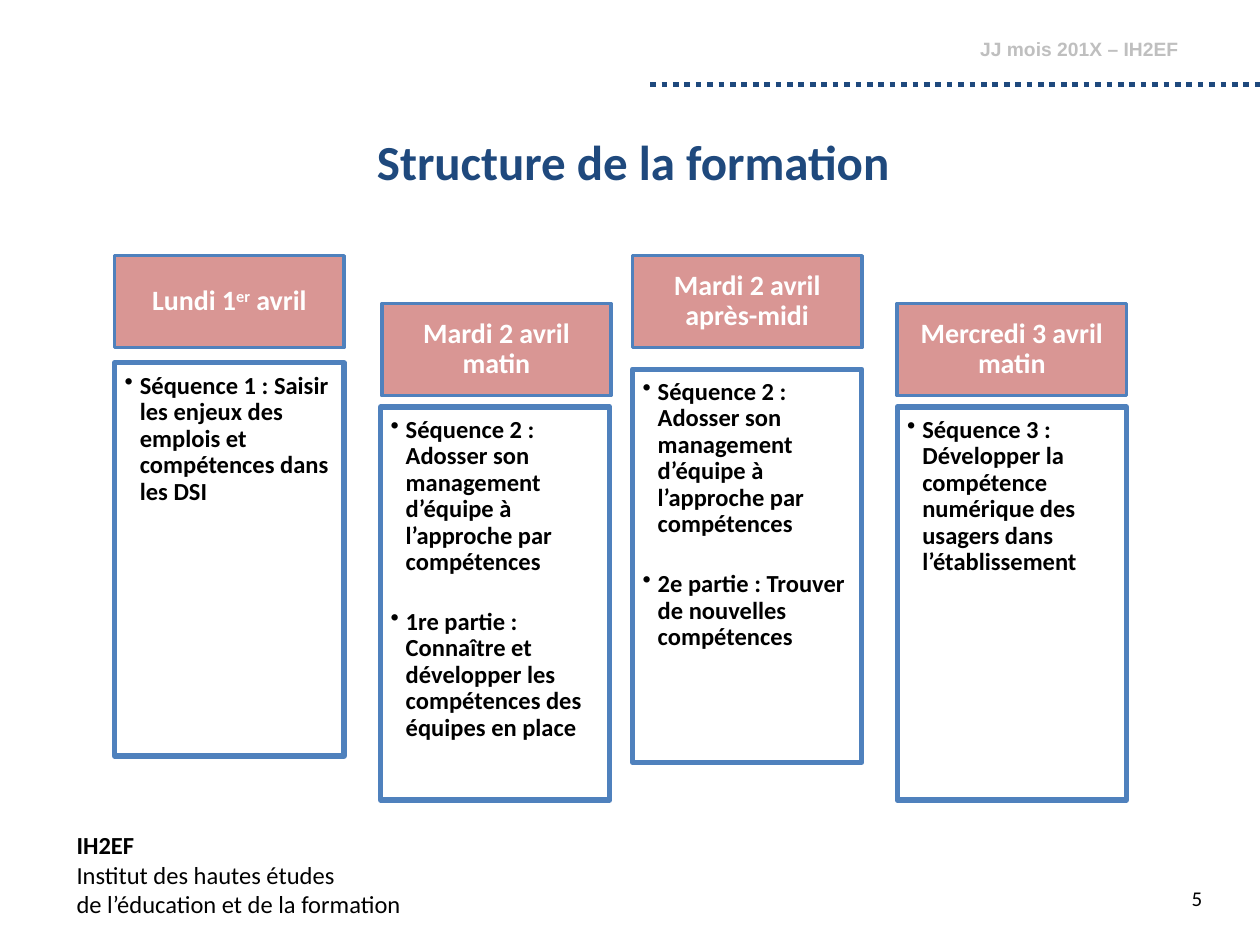
from dataclasses import dataclass

from lxml.etree import SubElement
from pptx import Presentation
from pptx.dml.color import RGBColor
from pptx.enum.dml import MSO_LINE
from pptx.enum.shapes import MSO_CONNECTOR, MSO_SHAPE
from pptx.enum.text import MSO_ANCHOR as Anchor, PP_ALIGN as Align
from pptx.oxml.ns import qn
from pptx.util import Inches, Pt

TITLE_ONLY = 5


@dataclass(frozen=True)
class Theme:
    navy: str = "1F497D"
    blue: str = "4F81BD"
    rose: str = "D99694"
    grey: str = "BFBFBF"
    white: str = "FFFFFF"
    black: str = "000000"
    body_font: str = "Calibri"
    header_font: str = "Arial"
    title_size: int = 28
    heading_size: int = 16
    text_size: int = 14
    number_size: int = 12
    header_size: int = 11


class SlideBuilder:
    CARD_WIDTH = 1.82
    HEADING_HEIGHT = 0.73
    LIST_HEIGHT = 3.12

    def __init__(self, slide, theme):
        self.slide = slide
        self.theme = theme

    def format(self, para, size, color, bold=False, font=None, align=Align.LEFT):
        para.alignment = align
        para.font.name = font or self.theme.body_font
        para.font.size = Pt(size)
        para.font.bold = bold
        para.font.color.rgb = RGBColor.from_string(color)

    def title(self, text, left, top, width, height):
        title = self.slide.shapes.title
        title.left, title.top = Inches(left), Inches(top)
        title.width, title.height = Inches(width), Inches(height)
        title.text_frame.text = text
        title.text_frame.vertical_anchor = Anchor.TOP
        self.format(title.text_frame.paragraphs[0], self.theme.title_size,
                    self.theme.navy, bold=True, align=Align.CENTER)

    def text(self, lines, left, top, width, height, anchor=Anchor.TOP):
        """Add a text box and return its paragraphs, ready to be formatted."""
        box = self.slide.shapes.add_textbox(
            Inches(left), Inches(top), Inches(width), Inches(height))
        frame = box.text_frame
        frame.word_wrap = True
        frame.vertical_anchor = anchor
        frame.text = "\n".join(lines)
        return frame.paragraphs

    def dotted_rule(self, left, right, y):
        rule = self.slide.shapes.add_connector(
            MSO_CONNECTOR.STRAIGHT, Inches(left), Inches(y), Inches(right), Inches(y))
        rule.line.color.rgb = RGBColor.from_string(self.theme.navy)
        rule.line.width = Pt(3.25)
        rule.line.dash_style = MSO_LINE.ROUND_DOT
        SubElement(rule._element.spPr, qn("a:effectLst"))

    def rectangle(self, left, top, height, fill, line_width, margins, anchor):
        box = self.slide.shapes.add_shape(
            MSO_SHAPE.RECTANGLE, Inches(left), Inches(top),
            Inches(self.CARD_WIDTH), Inches(height))
        box.shadow.inherit = False
        box.fill.solid()
        box.fill.fore_color.rgb = RGBColor.from_string(fill)
        box.line.color.rgb = RGBColor.from_string(self.theme.blue)
        box.line.width = Pt(line_width)
        frame = box.text_frame
        frame.word_wrap = True
        frame.vertical_anchor = anchor
        (frame.margin_left, frame.margin_top,
         frame.margin_right, frame.margin_bottom) = map(Inches, margins)
        return box

    def heading(self, parts, left, top):
        """Add a day heading; every second part is set as superscript."""
        box = self.rectangle(left, top, self.HEADING_HEIGHT, self.theme.rose, 2,
                             (0.12, 0.07, 0.12, 0.07), Anchor.MIDDLE)
        para = box.text_frame.paragraphs[0]
        self.format(para, self.theme.heading_size, self.theme.white,
                    bold=True, align=Align.CENTER)
        para.line_spacing = 0.9
        for index, part in enumerate(parts):
            span = para.add_run()
            span.text = part
            if index % 2:
                span._r.get_or_add_rPr().set("baseline", "30000")

    def bullet_list(self, items, left, top):
        box = self.rectangle(left, top, self.LIST_HEIGHT, self.theme.white, 3,
                             (0.08, 0.08, 0.11, 0.12), Anchor.TOP)
        fill_color = box._element.spPr.find(qn("a:solidFill"))[0]
        SubElement(fill_color, qn("a:alpha"), val="90000")
        box.text_frame.text = "\n".join(items)
        paras = box.text_frame.paragraphs
        for para in paras:
            self.format(para, self.theme.text_size, self.theme.black, bold=True)
            para.line_spacing = 0.9
            para.space_after = Pt(19 if para is not paras[-1] else 0)
            properties = para._p.get_or_add_pPr()
            properties.set("marL", str(Inches(0.12)))
            properties.set("indent", str(-Inches(0.12)))
            bullet = properties.makeelement(qn("a:buChar"), {"char": "•"})
            properties.insert_element_before(
                bullet, "a:tabLst", "a:defRPr", "a:extLst")


def main():
    theme = Theme()
    deck = Presentation()
    deck.slide_width, deck.slide_height = Inches(10), Inches(7.5)
    page = SlideBuilder(deck.slides.add_slide(deck.slide_layouts[TITLE_ONLY]), theme)

    institute = page.text(
        ["IH2EF", "Institut des hautes études", "de l’éducation et de la formation"],
        0.51, 6.54, 3.04, 0.81)
    for index, para in enumerate(institute):
        page.format(para, theme.text_size, theme.black, bold=index == 0)
    number = page.text(["5"], 6.81, 6.98, 2.83, 0.3)[0]
    page.format(number, theme.number_size, theme.black, align=Align.RIGHT)

    page.dotted_rule(5.16, 10.12, 0.67)
    header = page.text(["JJ mois 201X – IH2EF"], 7.68, 0.13, 2.99, 0.51, Anchor.MIDDLE)[0]
    page.format(header, theme.header_size, theme.grey, bold=True, font=theme.header_font)
    page.title("Structure de la formation", 0.91, 0.99, 8.23, 1.04)

    high, low = 2.03, 2.41
    sequence_2 = "Séquence 2 : Adosser son management d’équipe à l’approche par compétences"
    # heading parts, heading left, heading top, list left, list top, list items
    sessions = [
        (["Lundi 1", "er", " avril"], 0.91, high, 0.91, 2.88,
         ["Séquence 1 : Saisir les enjeux des emplois et compétences dans les DSI"]),
        (["Mardi 2 avril matin"], 3.03, low, 3.02, 3.23,
         [sequence_2,
          "1re partie : Connaître et développer les compétences des équipes en place"]),
        (["Mardi 2 avril après-midi"], 5.02, high, 5.02, 2.93,
         [sequence_2, "2e partie : Trouver de nouvelles compétences"]),
        (["Mercredi 3 avril matin"], 7.12, low, 7.12, 3.23,
         ["Séquence 3 : Développer la compétence numérique des usagers "
          "dans l’établissement"]),
    ]
    for parts, heading_left, heading_top, list_left, list_top, items in sessions:
        page.heading(parts, heading_left, heading_top)
        page.bullet_list(items, list_left, list_top)

    deck.save("out.pptx")


if __name__ == "__main__":
    main()
